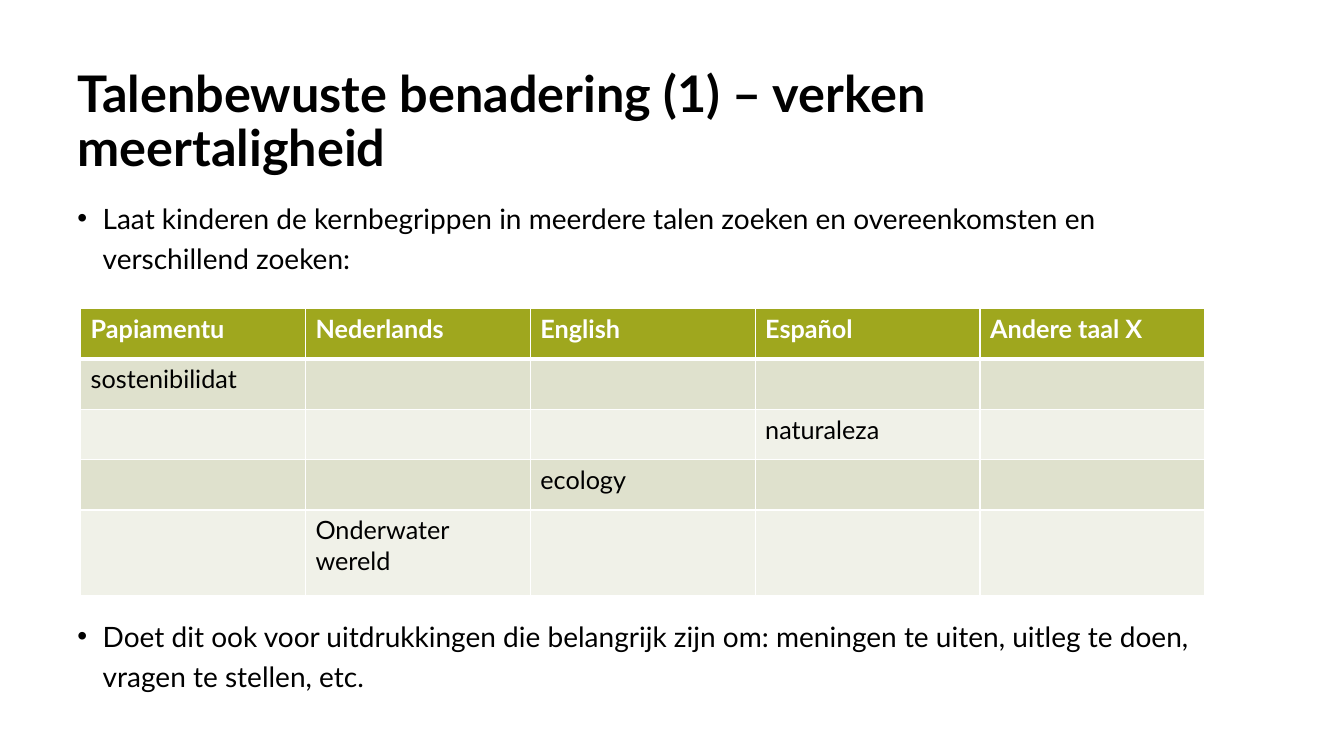
from dataclasses import dataclass

from lxml import etree
from pptx import Presentation
from pptx.dml.color import RGBColor
from pptx.enum.text import MSO_ANCHOR, PP_ALIGN
from pptx.oxml.ns import qn
from pptx.util import Inches, Pt

TOP, MIDDLE = MSO_ANCHOR.TOP, MSO_ANCHOR.MIDDLE
LEFT = PP_ALIGN.LEFT

FONT = "Lato"
COLORS = {
    "text": "000000",
    "header_text": "FFFFFF",
    "border": "FFFFFF",
    "header": "9FA71E",
    "odd_row": "DFE1CD",
    "even_row": "F0F1E8",
}

TEXT_LEFT, TEXT_WIDTH = 0.67, 11.65
TITLE = "Talenbewuste benadering (1) – verken meertaligheid"

LANGUAGES = ["Papiamentu", "Nederlands", "English", "Español", "Andere taal X"]
WORD_ROWS = [
    {"Papiamentu": "sostenibilidat"},
    {"Español": "naturaleza"},
    {"English": "ecology"},
    {"Nederlands": "Onderwater wereld"},
]
ROW_HEIGHTS = [0.5, 0.5, 0.5, 0.5, 0.85]
COLUMN_WIDTH = 2.23


@dataclass
class Bullet:
    top: float
    text: str


BULLETS = [
    Bullet(1.88, "Laat kinderen de kernbegrippen in meerdere talen zoeken "
                 "en overeenkomsten en verschillend zoeken:"),
    Bullet(6.03, "Doet dit ook voor uitdrukkingen die belangrijk zijn om: "
                 "meningen te uiten, uitleg te doen, vragen te stellen, etc."),
]


def write(frame, text: str, *, size: float, color: str = "text",
          bold: bool = False, line_spacing: float = 1.0, before: float = 0):
    """Fill a text frame with one formatted paragraph and return it."""
    paragraph = frame.paragraphs[0]
    paragraph.alignment = LEFT
    paragraph.line_spacing = line_spacing
    paragraph.space_before = Pt(before)
    run = paragraph.add_run()
    run.text = text
    run.font.name = FONT
    run.font.size = Pt(size)
    run.font.bold = bold
    run.font.color.rgb = RGBColor.from_string(COLORS[color])
    return paragraph


def add_title(slide) -> None:
    title = slide.shapes.title
    title.left, title.top = Inches(TEXT_LEFT), Inches(0.6)
    title.width, title.height = Inches(TEXT_WIDTH), Inches(1.24)
    title.text_frame.word_wrap = True
    title.text_frame.vertical_anchor = MIDDLE
    write(title.text_frame, TITLE, size=36, bold=True, line_spacing=0.9)


def add_bullet(slide, bullet: Bullet) -> None:
    box = slide.shapes.add_textbox(Inches(TEXT_LEFT), Inches(bullet.top),
                                   Inches(TEXT_WIDTH), Inches(1.11))
    box.text_frame.word_wrap = True
    box.text_frame.vertical_anchor = TOP
    paragraph = write(box.text_frame, bullet.text, size=20,
                      line_spacing=1.2, before=10)
    properties = paragraph._p.get_or_add_pPr()
    properties.set("marL", str(Inches(0.25)))
    properties.set("indent", str(-Inches(0.25)))
    etree.SubElement(properties, qn("a:buFont"), typeface="Arial")
    etree.SubElement(properties, qn("a:buChar"), char="•")


def set_borders(cell, top: float, bottom: float) -> None:
    """Draw the four cell borders, placed ahead of the fill as the schema asks."""
    properties = cell._tc.get_or_add_tcPr()
    widths = {"lnL": 1, "lnR": 1, "lnT": top, "lnB": bottom}
    for position, (side, width) in enumerate(widths.items()):
        line = etree.Element(qn(f"a:{side}"), w=str(Pt(width)))
        fill = etree.SubElement(line, qn("a:solidFill"))
        etree.SubElement(fill, qn("a:srgbClr"), val=COLORS["border"])
        properties.insert(position, line)


def add_word_table(slide) -> None:
    table = slide.shapes.add_table(
        len(ROW_HEIGHTS), len(LANGUAGES), Inches(0.8), Inches(3.06),
        Inches(COLUMN_WIDTH * len(LANGUAGES)), Inches(sum(ROW_HEIGHTS))).table
    for column in table.columns:
        column.width = Inches(COLUMN_WIDTH)
    header = {language: language for language in LANGUAGES}
    for r, words in enumerate([header, *WORD_ROWS]):
        table.rows[r].height = Inches(ROW_HEIGHTS[r])
        is_header = r == 0
        fill = "header" if is_header else "odd_row" if r % 2 else "even_row"
        for c, language in enumerate(LANGUAGES):
            cell = table.cell(r, c)
            cell.fill.solid()
            cell.fill.fore_color.rgb = RGBColor.from_string(COLORS[fill])
            set_borders(cell, top=3 if r == 1 else 1, bottom=3 if is_header else 1)
            if language in words:
                write(cell.text_frame, words[language], size=18, bold=is_header,
                      color="header_text" if is_header else "text")


def main() -> None:
    presentation = Presentation()
    presentation.slide_width = Inches(13.33)
    presentation.slide_height = Inches(7.5)
    title_only = presentation.slide_layouts[5]
    slide = presentation.slides.add_slide(title_only)
    add_title(slide)
    add_word_table(slide)
    for bullet in BULLETS:
        add_bullet(slide, bullet)
    presentation.save("out.pptx")


if __name__ == "__main__":
    main()
